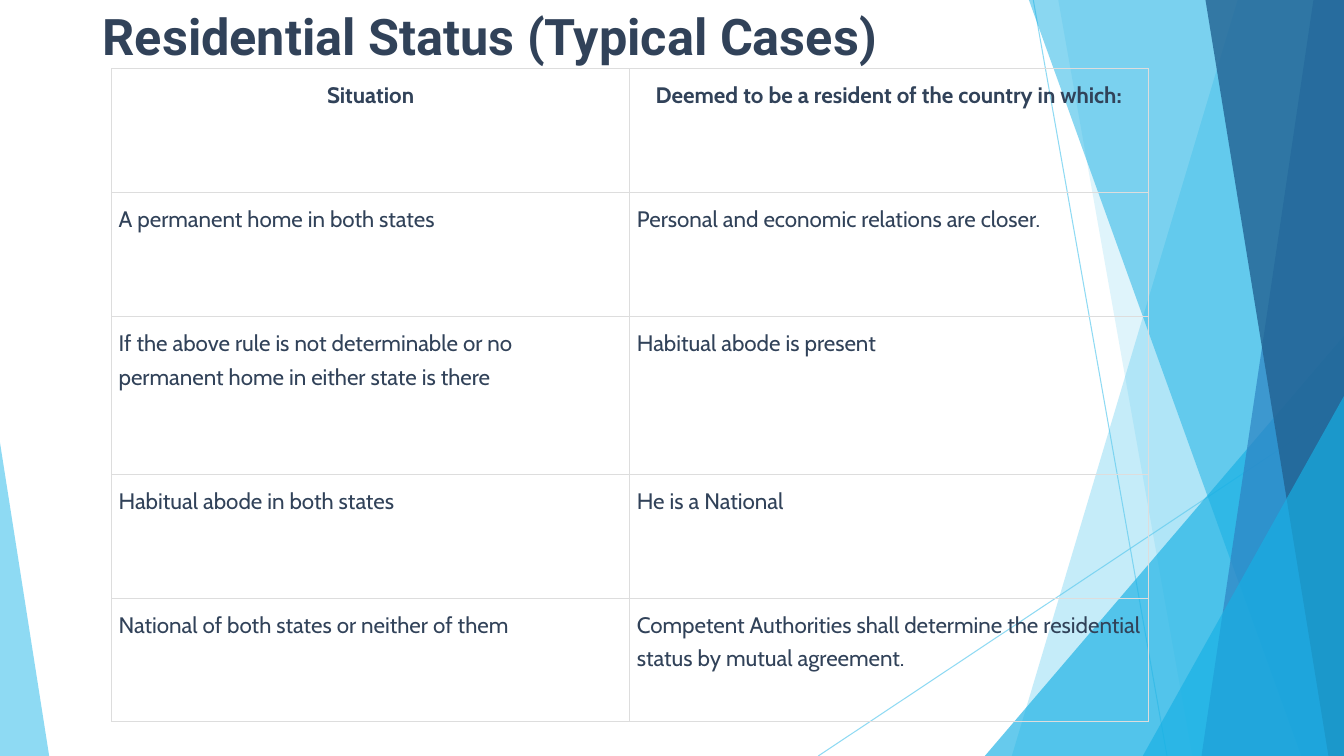
from dataclasses import dataclass

from lxml.etree import SubElement
from pptx import Presentation
from pptx.dml.color import RGBColor
from pptx.enum.shapes import MSO_CONNECTOR as Connector, MSO_SHAPE as Preset
from pptx.enum.text import MSO_ANCHOR as Anchor, PP_ALIGN as Align
from pptx.oxml.ns import qn
from pptx.util import Cm, Pt

WIDTH, HEIGHT = 33.87, 19.05


@dataclass(frozen=True)
class Theme:
    text: str = "314259"
    sky: str = "5FCBEF"
    cyan: str = "17B0E4"
    blue: str = "2E83C3"
    navy: str = "226292"
    border: str = "DDDDDD"
    title_font: str = "Roboto"
    table_font: str = "Cabin"
    title_size: float = 36
    table_size: float = 16
    table_leading: float = 24
    hairline: float = 0.75


@dataclass(frozen=True)
class Ray:
    """A thin line; lengths in cm."""
    x1: float
    y1: float
    x2: float
    y2: float


@dataclass(frozen=True)
class Band:
    """A full-height facet reaching the right edge; its left side slants."""
    top_x: float
    bottom_x: float
    color: str
    opacity: int


@dataclass(frozen=True)
class Corner:
    """A right triangle standing on the bottom edge; apex 0 left, 1 right."""
    left: float
    top: float
    width: float
    apex: int
    color: str
    opacity: int


THEME = Theme()

RAYS = [Ray(26.04, 0, 29.41, HEIGHT), Ray(WIDTH, 10.24, 20.62, HEIGHT)]

FACETS = [
    Band(31.19, 25.5, THEME.sky, 36),
    Band(26.67, 30.05, THEME.sky, 20),
    Corner(24.82, 8.46, 9.05, 1, THEME.cyan, 66),
    Band(25.93, 32.79, THEME.cyan, 50),
    Band(33.1, 30.28, THEME.blue, 70),
    Band(30.38, 33.48, THEME.navy, 80),
    Corner(28.8, 9.98, 5.07, 1, THEME.cyan, 66),
    Corner(0, 11.15, 1.24, 0, THEME.sky, 70),
]

CASES = [
    ("Situation", "Deemed to be a resident of the country in which:"),
    ("A permanent home in both states",
     "Personal and economic relations are closer."),
    ("If the above rule is not determinable or no permanent home "
     "in either state is there", "Habitual abode is present"),
    ("Habitual abode in both states", "He is a National"),
    ("National of both states or neither of them",
     "Competent Authorities shall determine the residential status "
     "by mutual agreement."),
]
ROW_HEIGHTS = [3.12, 3.12, 3.98, 3.12, 3.12]
COLUMN_WIDTH = 13.06


def set_opacity(color_format, percent: int) -> None:
    color = color_format._xFill.find(qn("a:srgbClr"))
    SubElement(color, qn("a:alpha"), val=str(percent * 1000))


def write(frame, text: str, *, font: str, size: float, bold: bool = False,
          align: Align = Align.LEFT, leading: float | None = None) -> None:
    frame.word_wrap = True
    paragraph = frame.paragraphs[0]
    paragraph.alignment = align
    if leading:
        paragraph.line_spacing = Pt(leading)
    run = paragraph.add_run()
    run.text = text
    run.font.name, run.font.size, run.font.bold = font, Pt(size), bold
    run.font.color.rgb = RGBColor.from_string(THEME.text)


def draw_ray(slide, ray: Ray) -> None:
    line = slide.shapes.add_connector(
        Connector.STRAIGHT, Cm(ray.x1), Cm(ray.y1), Cm(ray.x2), Cm(ray.y2))
    line.line.width = Pt(THEME.hairline)
    line.line.color.rgb = RGBColor.from_string(THEME.sky)
    set_opacity(line.line.color, 70)
    SubElement(line._element.spPr, qn("a:effectLst"))


def draw_facet(slide, facet: Band | Corner) -> None:
    if isinstance(facet, Band):
        outline = slide.shapes.build_freeform(Cm(facet.top_x), 0)
        outline.add_line_segments([
            (Cm(WIDTH), 0), (Cm(WIDTH), Cm(HEIGHT)),
            (Cm(facet.bottom_x), Cm(HEIGHT))])
        shape = outline.convert_to_shape()
    else:
        shape = slide.shapes.add_shape(
            Preset.ISOSCELES_TRIANGLE, Cm(facet.left), Cm(facet.top),
            Cm(facet.width), Cm(HEIGHT - facet.top))
        shape.adjustments[0] = facet.apex
    shape.shadow.inherit = False
    shape.line.fill.background()
    shape.fill.solid()
    shape.fill.fore_color.rgb = RGBColor.from_string(facet.color)
    set_opacity(shape.fill.fore_color, facet.opacity)


def draw_title(slide) -> None:
    title = slide.shapes.add_textbox(Cm(2.34), 0, Cm(29.21), Cm(1.73))
    title.text_frame.vertical_anchor = Anchor.TOP
    write(title.text_frame, "Residential Status (Typical Cases)",
          font=THEME.title_font, size=THEME.title_size, bold=True)


def add_borders(cell) -> None:
    properties = cell._tc.get_or_add_tcPr()
    for position, side in enumerate(("lnL", "lnR", "lnT", "lnB")):
        border = SubElement(properties, qn(f"a:{side}"),
                            w=str(Pt(THEME.hairline)))
        fill = SubElement(border, qn("a:solidFill"))
        SubElement(fill, qn("a:srgbClr"), val=THEME.border)
        properties.insert(position, border)


def draw_cases(slide) -> None:
    table = slide.shapes.add_table(
        len(CASES), 2, Cm(2.81), Cm(1.73),
        Cm(2 * COLUMN_WIDTH), Cm(sum(ROW_HEIGHTS))).table
    table.first_row = table.horz_banding = False
    for column in table.columns:
        column.width = Cm(COLUMN_WIDTH)
    for row_index, (case, height) in enumerate(zip(CASES, ROW_HEIGHTS)):
        table.rows[row_index].height = Cm(height)
        is_header = row_index == 0
        for column_index, text in enumerate(case):
            cell = table.cell(row_index, column_index)
            cell.fill.background()
            cell.margin_left = cell.margin_right = Cm(0.18)
            cell.margin_top = cell.margin_bottom = Cm(0.18)
            add_borders(cell)
            write(cell.text_frame, text, font=THEME.table_font,
                  size=THEME.table_size, bold=is_header,
                  align=Align.CENTER if is_header else Align.LEFT,
                  leading=THEME.table_leading)


def main() -> None:
    deck = Presentation()
    deck.slide_width, deck.slide_height = Cm(WIDTH), Cm(HEIGHT)
    slide = deck.slides.add_slide(deck.slide_layouts[6])

    # Backdrop of rays and translucent facets
    for ray in RAYS:
        draw_ray(slide, ray)
    for facet in FACETS:
        draw_facet(slide, facet)

    # Heading and table of residence rules
    draw_title(slide)
    draw_cases(slide)
    deck.save("out.pptx")


if __name__ == "__main__":
    main()
